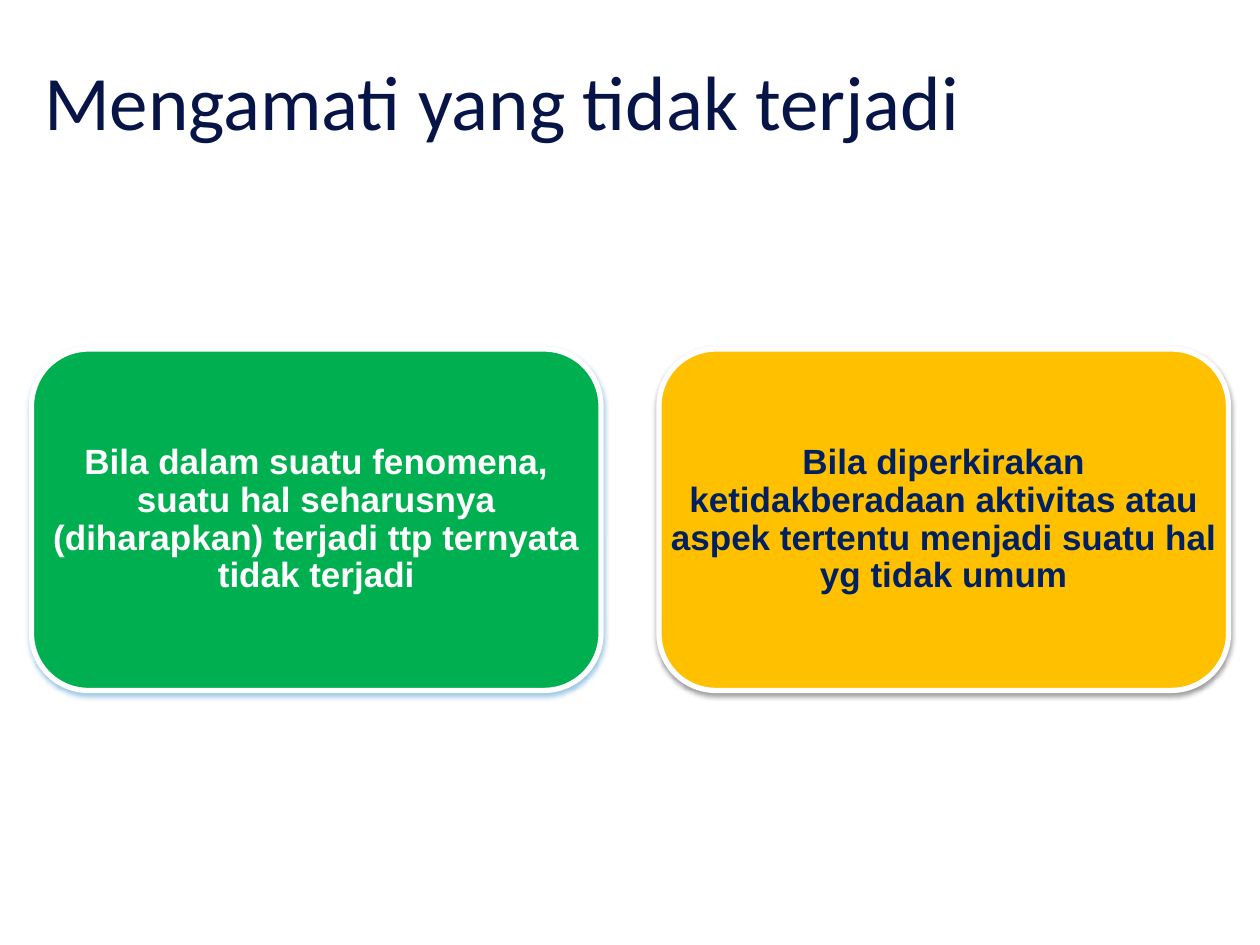
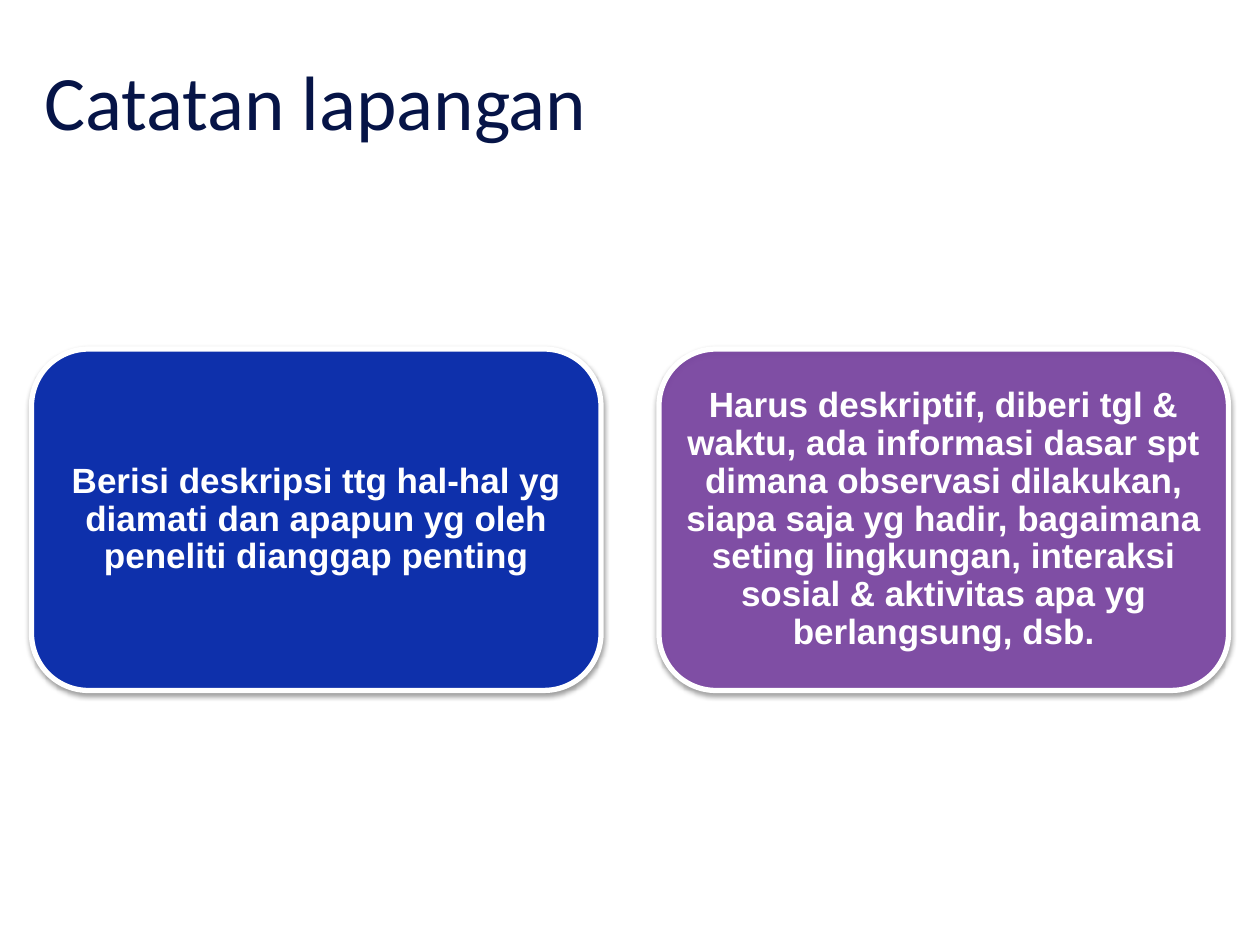
from lxml import etree
from pptx import Presentation
from pptx.dml.color import RGBColor
from pptx.enum.shapes import MSO_SHAPE
from pptx.enum.text import MSO_ANCHOR, MSO_AUTO_SIZE, PP_ALIGN
from pptx.oxml.ns import qn
from pptx.util import Pt

ROUNDED = MSO_SHAPE.ROUNDED_RECTANGLE
MIDDLE = MSO_ANCHOR.MIDDLE
NO_AUTOFIT = MSO_AUTO_SIZE.NONE
LEFT, CENTER = PP_ALIGN.LEFT, PP_ALIGN.CENTER

COLORS = {
    "title": "061447",
    "white": "FFFFFF",
    "navy": "002060",
    "green": "00B050",
    "amber": "FFC000",
    "blue": "0E30AB",
    "purple": "7030A0",
    "black": "000000",
    "glow": "0070C0",
}
SLIDE_SIZE = (720, 540)
TITLE_BOX = (18, 23.76, 653.76, 66.24)
CARDS_BOX = (18, 199.44, 684, 195.12)
CARD_GAP = 33.12
TITLE_ONLY = 5

SLIDES = [
    ("Mengamati yang tidak terjadi", [
        {"statement": "Bila dalam suatu fenomena, suatu hal seharusnya (diharapkan) "
                      "terjadi ttp ternyata tidak terjadi",
         "fill": "green", "shadow": "glow"},
        {"statement": "Bila diperkirakan ketidakberadaan aktivitas atau aspek tertentu "
                      "menjadi suatu hal yg tidak umum",
         "fill": "amber", "color": "navy"},
    ]),
    ("Catatan lapangan", [
        {"statement": "Berisi deskripsi ttg hal-hal yg diamati dan apapun yg oleh "
                      "peneliti dianggap penting",
         "fill": "blue"},
        {"statement": "Harus deskriptif, diberi tgl & waktu, ada informasi dasar spt "
                      "dimana observasi dilakukan, siapa saja yg hadir, bagaimana seting "
                      "lingkungan, interaksi sosial & aktivitas apa yg berlangsung, dsb.",
         "fill": "purple", "opacity": 77},
    ]),
]


def rgb(name):
    return RGBColor.from_string(COLORS[name])


def write(frame, text, *, font, size, color, bold=False, align=LEFT, spacing=1.0, inset=None):
    frame.word_wrap = True
    frame.auto_size = NO_AUTOFIT
    frame.vertical_anchor = MIDDLE
    if inset is not None:
        frame.margin_left = frame.margin_right = Pt(inset)
        frame.margin_top = frame.margin_bottom = Pt(inset)
    paragraph = frame.paragraphs[0]
    paragraph.alignment = align
    paragraph.line_spacing = spacing
    run = paragraph.add_run()
    run.text = text
    run.font.name = font
    run.font.size = Pt(size)
    run.font.bold = bold
    run.font.color.rgb = rgb(color)


def add_alpha(color_element, percent):
    etree.SubElement(color_element, qn("a:alpha"), val=str(percent * 1000))


def cast_shadow(shape, color):
    shape.shadow.inherit = False
    effects = shape.element.spPr.find(qn("a:effectLst"))
    shadow = etree.SubElement(effects, qn("a:outerShdw"), blurRad=str(Pt(3.1)),
                              dist=str(Pt(1.6)), dir="5400000", rotWithShape="0")
    add_alpha(etree.SubElement(shadow, qn("a:srgbClr"), val=COLORS[color]), 38)


def add_title(slide, text, box):
    title = slide.shapes.title
    title.left, title.top, title.width, title.height = map(Pt, box)
    write(title.text_frame, text, font="Calibri", size=44, color="title")


def add_card(slide, box, statement, fill, color="white", shadow="black", opacity=100):
    place = [Pt(length) for length in box]
    card = slide.shapes.add_shape(ROUNDED, *place)
    card.fill.solid()
    card.fill.fore_color.rgb = rgb(fill)
    if opacity < 100:
        add_alpha(card.element.spPr.find(qn("a:solidFill"))[0], opacity)
    card.line.color.rgb = rgb("white")
    card.line.width = Pt(3)
    cast_shadow(card, shadow)
    write(slide.shapes.add_textbox(*place).text_frame, statement, font="Arial", size=20,
          color=color, bold=True, align=CENTER, spacing=0.9, inset=5.76)


def add_cards(slide, cards, box):
    left, top, width, height = box
    card_width = (width - CARD_GAP * (len(cards) - 1)) / len(cards)
    for index, card in enumerate(cards):
        card_left = left + index * (card_width + CARD_GAP)
        add_card(slide, (card_left, top, card_width, height), **card)


def main():
    deck = Presentation()
    deck.slide_width, deck.slide_height = map(Pt, SLIDE_SIZE)
    for heading, cards in SLIDES:
        slide = deck.slides.add_slide(deck.slide_layouts[TITLE_ONLY])
        slide.background.fill.solid()
        slide.background.fill.fore_color.rgb = rgb("white")
        add_cards(slide, cards, CARDS_BOX)
        add_title(slide, heading, TITLE_BOX)
    deck.save("out.pptx")


if __name__ == "__main__":
    main()
